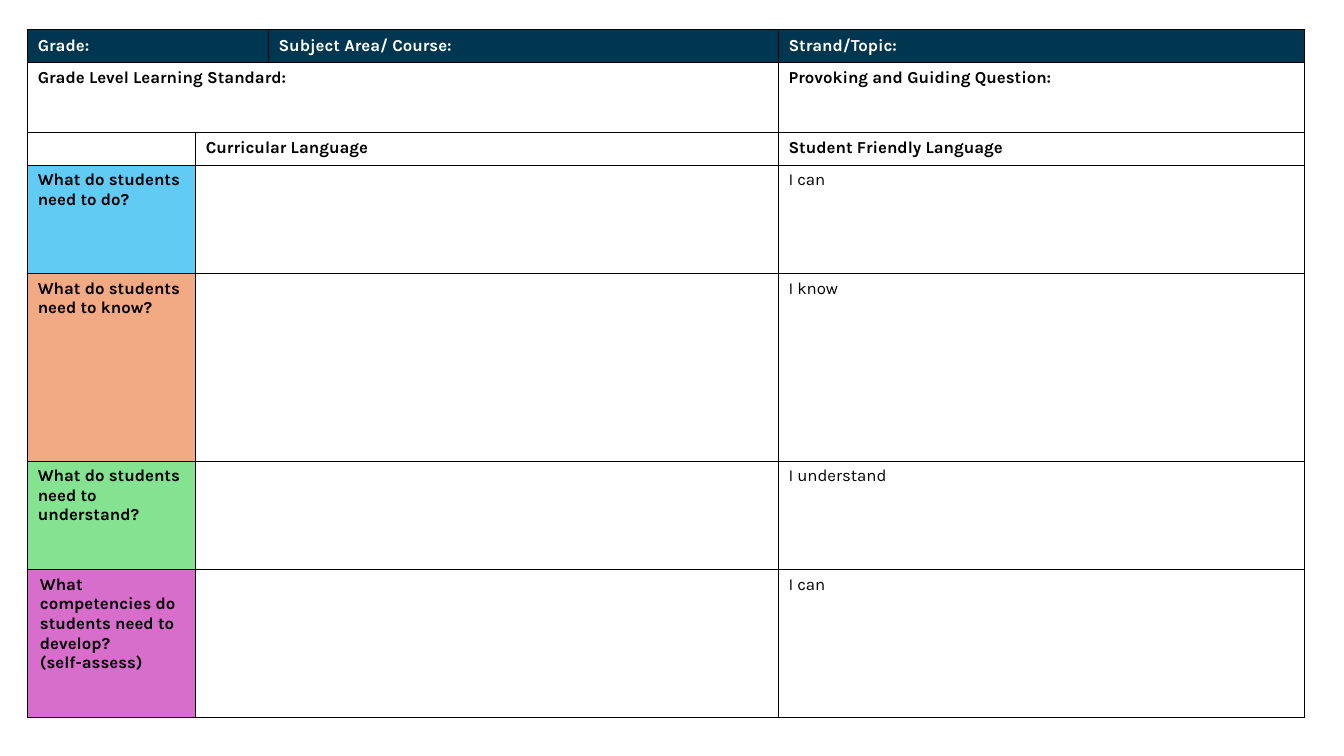
import pptx
import pptx.util
import pptx.dml.color
import pptx.enum.text
import pptx.oxml
import pptx.oxml.ns
from lxml import etree
from dataclasses import dataclass

Pt = pptx.util.Pt
RGB = pptx.dml.color.RGBColor.from_string


@dataclass(frozen=True)
class Theme:
    font: str = "Karla"
    size: int = 12
    line: int = 1
    navy: str = "00364F"
    white: str = "FFFFFF"
    black: str = "000000"
    blue: str = "61CBF4"
    peach: str = "F2AA84"
    green: str = "84E291"
    pink: str = "D86ECC"


THEME = Theme()
COLS = [120, 52, 364.3, 376]
ROWS = [23.6, 50, 23.2, 77.5, 133.9, 77.5, 105.7]
NEEDS = [
    ("What do students need to do?", THEME.blue, "I can"),
    ("What do students need to know?", THEME.peach, "I know"),
    ("What do students need to understand?", THEME.green, "I understand"),
    ("What competencies do students need to develop?\n(self-assess)", THEME.pink, "I can"),
]


def add_edge(cell):
    props = cell._tc.get_or_add_tcPr()
    for side in "LRTB":
        props.append(pptx.oxml.parse_xml(
            f'<a:ln{side} {pptx.oxml.ns.nsdecls("a")} w="{Pt(THEME.line)}">'
            f'<a:solidFill><a:srgbClr val="{THEME.black}"/></a:solidFill>'
            f'</a:ln{side}>'))


def set_base(cell):
    add_edge(cell)
    cell.fill.solid()
    cell.fill.fore_color.rgb = RGB(THEME.white)
    end = etree.SubElement(cell.text_frame.paragraphs[0]._p, pptx.oxml.ns.qn("a:endParaRPr"))
    end.set("sz", str(THEME.size * 100))


def fill_cell(cell, text, fill=THEME.white, color=THEME.black, bold=True):
    cell.fill.solid()
    cell.fill.fore_color.rgb = RGB(fill)
    cell.text_frame.text = text
    for para in cell.text_frame.paragraphs:
        for run in para.runs:
            run.font.name = THEME.font
            run.font.size = Pt(THEME.size)
            run.font.bold = bold
            run.font.color.rgb = RGB(color)


def add_grid(slide):
    frame = slide.shapes.add_table(len(ROWS), len(COLS), Pt(19.8), Pt(21.3),
                                   Pt(sum(COLS)), Pt(sum(ROWS)))
    grid = frame.table
    grid.first_row = grid.horz_banding = False
    for col, width in zip(grid.columns, COLS):
        col.width = Pt(width)
    for row, height in zip(grid.rows, ROWS):
        row.height = Pt(height)
    for cell in grid.iter_cells():
        set_base(cell)
    return grid


def join_cells(grid):
    spans = [(0, 1), (0, 2)] + [(1, 2)] * (len(ROWS) - 2)
    for row, (first, last) in enumerate(spans):
        grid.cell(row, first).merge(grid.cell(row, last))


def add_heads(grid):
    for col, text in [(0, "Grade:"), (2, "Subject Area/ Course:"), (3, "Strand/Topic:")]:
        cell = grid.cell(0, col)
        fill_cell(cell, text, THEME.navy, THEME.white)
        cell.vertical_anchor = pptx.enum.text.MSO_ANCHOR.MIDDLE
    fill_cell(grid.cell(1, 0), "Grade Level Learning Standard:")
    fill_cell(grid.cell(1, 3), "Provoking and Guiding Question:")
    fill_cell(grid.cell(2, 1), "Curricular Language")
    fill_cell(grid.cell(2, 3), "Student Friendly Language")


def add_needs(grid):
    for row, (need, fill, start) in enumerate(NEEDS, 3):
        fill_cell(grid.cell(row, 0), need, fill)
        fill_cell(grid.cell(row, 3), start, bold=False)
    for para in grid.cell(len(ROWS) - 1, 0).text_frame.paragraphs:
        props = para._p.get_or_add_pPr()
        props.set("marL", str(Pt(1.5)))
        props.set("indent", "0")


def main():
    deck = pptx.Presentation()
    deck.slide_width, deck.slide_height = Pt(960), Pt(540)
    slide = deck.slides.add_slide(deck.slide_layouts[6])
    grid = add_grid(slide)
    join_cells(grid)
    add_heads(grid)
    add_needs(grid)
    deck.save("out.pptx")


if __name__ == "__main__":
    main()
